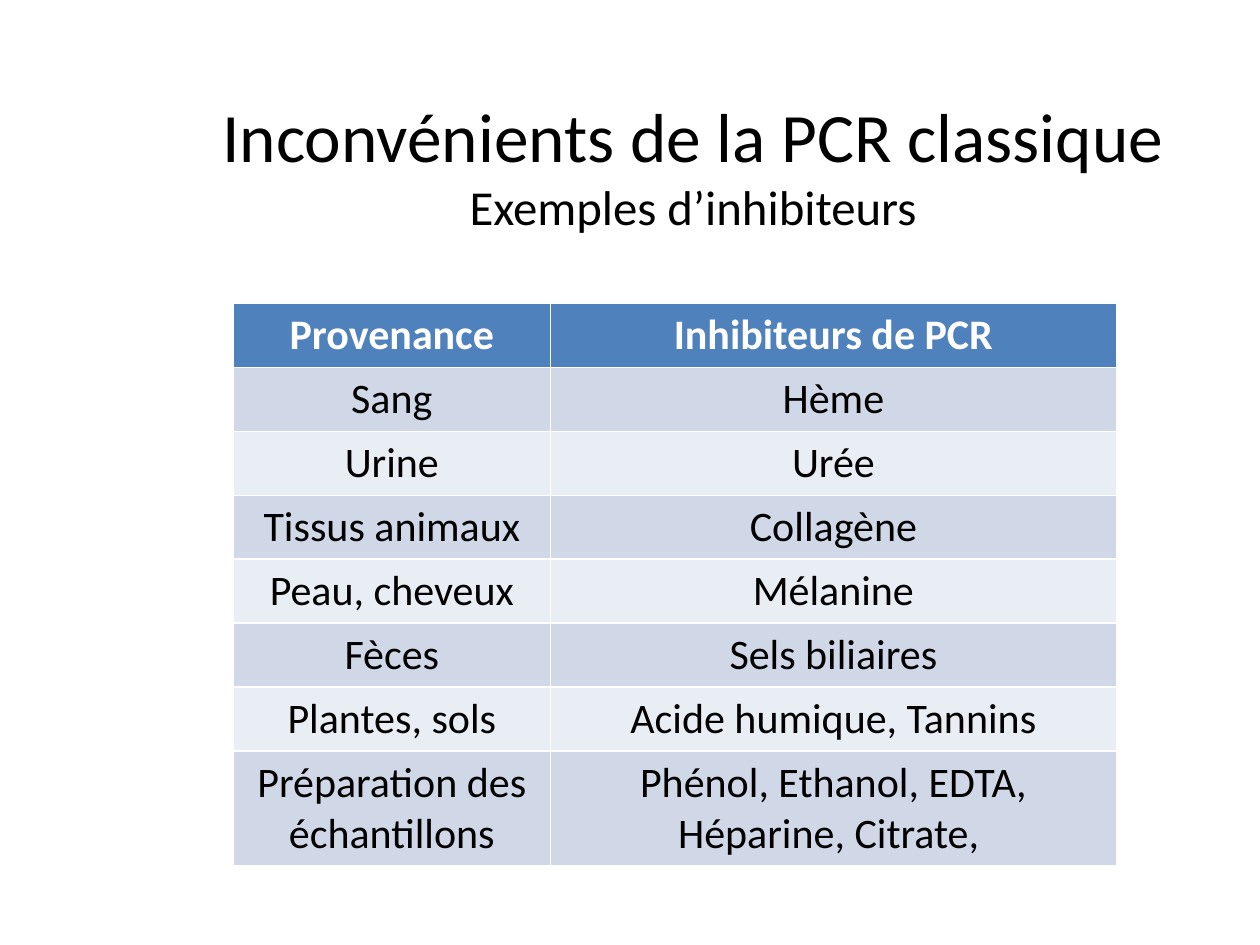
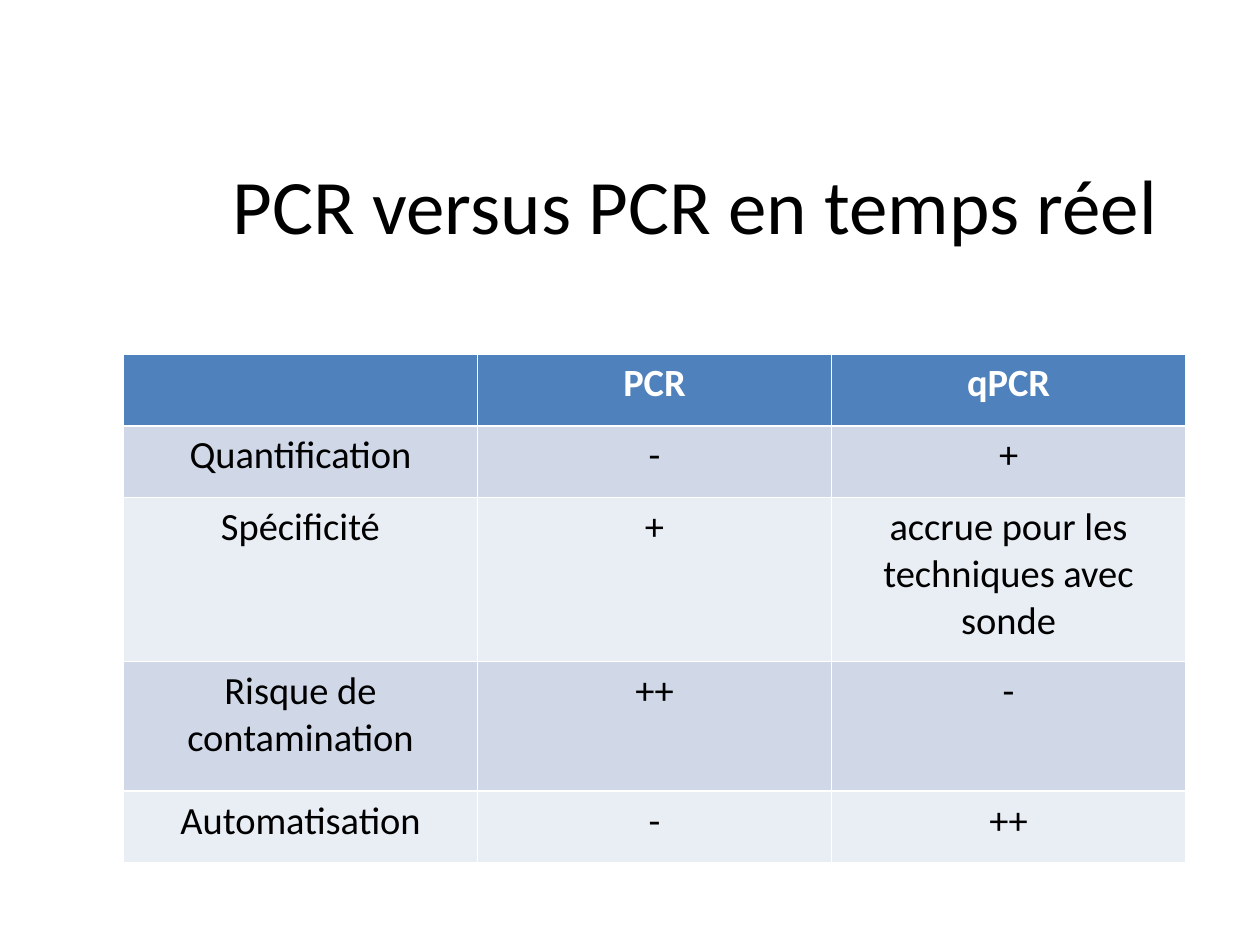
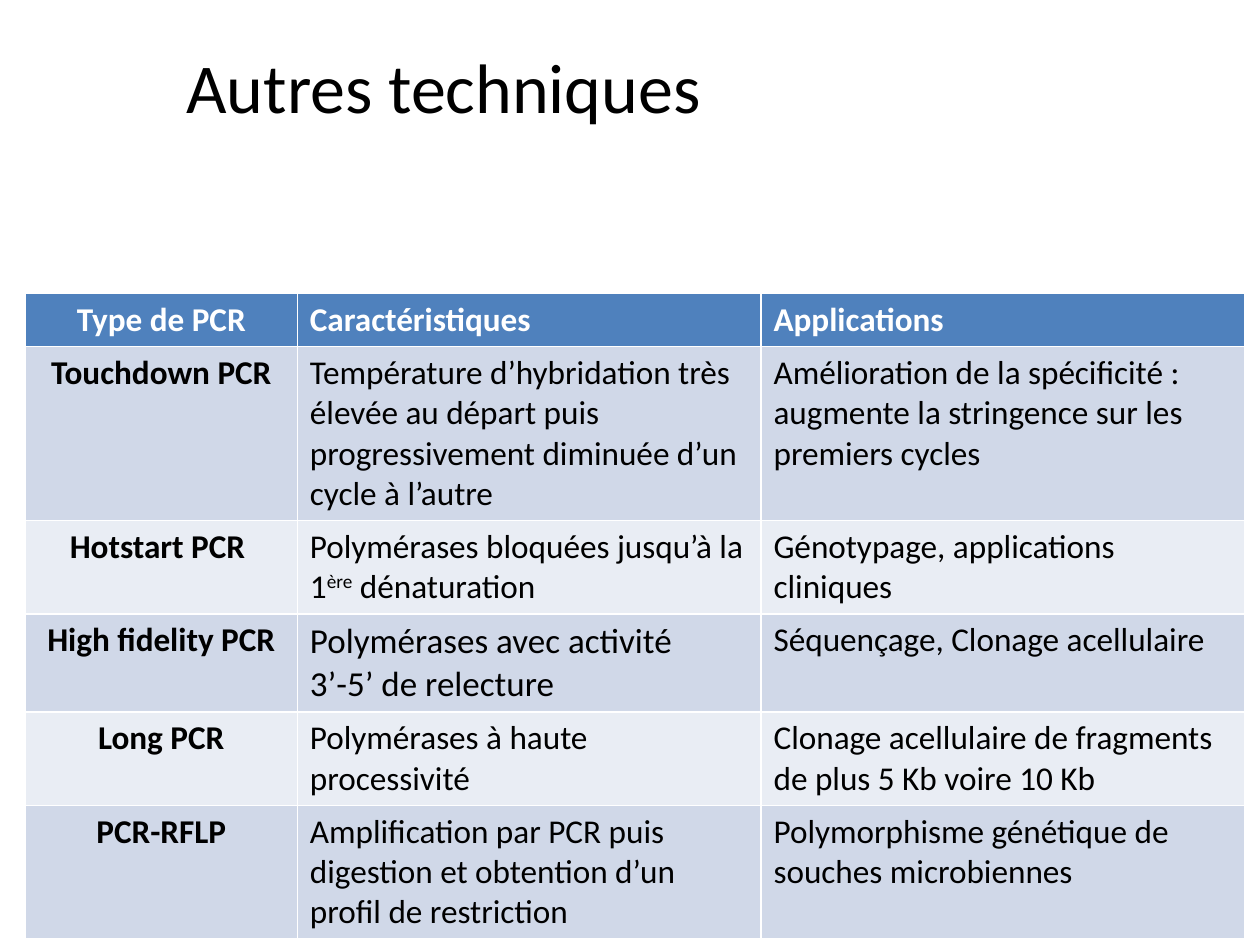
from pptx import Presentation
from pptx.dml.color import RGBColor
from pptx.enum.text import MSO_ANCHOR, MSO_AUTO_SIZE, PP_ALIGN
from pptx.util import Inches, Pt

FONT = "Calibri"
COLORS = {
    "header": "4F81BD",
    "band_dark": "D0D8E8",
    "band_light": "E9EDF4",
    "text": "000000",
    "header_text": "FFFFFF",
}

SLIDES = [
    {
        "title": [("Inconvénients de la PCR classique", 39.6),
                  ("Exemples d’inhibiteurs", 27.9)],
        "title_box": (1, 0.68, 9, 1.25),
        "title_align": PP_ALIGN.CENTER,
        "table_at": (1.85, 2.41),
        "columns": [2.52, 4.49],
        "row_heights": [0.41] * 8,
        "size": 24,
        "rows": [
            ["Provenance", "Inhibiteurs de PCR"],
            ["Sang", "Hème"],
            ["Urine", "Urée"],
            ["Tissus animaux", "Collagène"],
            ["Peau, cheveux", "Mélanine"],
            ["Fèces", "Sels biliaires"],
            ["Plantes, sols", "Acide humique, Tannins"],
            ["Préparation des échantillons",
             "Phénol, Ethanol, EDTA, Héparine, Citrate, "],
        ],
    },
    {
        "title": [("PCR versus PCR en temps réel", 44)],
        "title_box": (1.04, 0.99, 8.96, 1.25),
        "title_align": PP_ALIGN.CENTER,
        "table_at": (0.98, 2.81),
        "columns": [2.81] * 3,
        "row_heights": [0.57, 0.57, 1.3, 1.03, 0.57],
        "size": 22,
        "rows": [
            ["", "PCR", "qPCR"],
            ["Quantification", "-", "+"],
            ["Spécificité", "+", "accrue pour les techniques avec sonde"],
            ["Risque de contamination", "++", "-"],
            ["Automatisation", "-", "++"],
        ],
    },
    {
        "title": [("Autres techniques", 40)],
        "title_box": (1.38, 0.29, 8.12, 0.77),
        "title_align": PP_ALIGN.LEFT,
        "table_at": (0.2, 2.33),
        "columns": [2.16, 3.68, 3.84],
        "row_heights": [0.41, 0.7, 0.52, 0.41, 0.41, 0.41],
        "size": 19,
        "cell_sizes": {(3, 1): 20},
        "row_labels": True,
        "rows": [
            ["Type de PCR", "Caractéristiques", "Applications"],
            ["Touchdown PCR",
             "Température d’hybridation très élevée au départ puis "
             "progressivement diminuée d’un cycle à l’autre",
             "Amélioration de la spécificité : augmente la stringence "
             "sur les premiers cycles"],
            ["Hotstart PCR ",
             "Polymérases bloquées jusqu’à la 1^ère^ dénaturation",
             "Génotypage, applications cliniques"],
            ["High fidelity PCR",
             "Polymérases avec activité\n3’-5’ de relecture",
             "Séquençage, Clonage acellulaire"],
            ["Long PCR",
             "Polymérases à haute processivité",
             "Clonage acellulaire de fragments de plus 5 Kb voire 10 Kb"],
            ["PCR-RFLP",
             "Amplification par PCR puis digestion et obtention d’un "
             "profil de restriction",
             "Polymorphisme génétique de souches microbiennes"],
        ],
    },
]


def add_run(paragraph, text, size, color, bold=False):
    run = paragraph.add_run()
    run.text = text
    run.font.name = FONT
    run.font.size = Pt(size)
    run.font.bold = bold
    run.font.color.rgb = RGBColor.from_string(COLORS[color])
    return run


def fill_cell(cell, text, size, color, bold, alignment):
    """Write text; a newline starts a paragraph and ^...^ marks a superscript."""
    for index, line in enumerate(text.split("\n")):
        text_frame = cell.text_frame
        paragraph = text_frame.add_paragraph() if index else text_frame.paragraphs[0]
        paragraph.alignment = alignment
        for part_index, part in enumerate(line.split("^")):
            if part:
                run = add_run(paragraph, part, size, color, bold)
                if part_index % 2:
                    run._r.get_or_add_rPr().set("baseline", "30000")


presentation = Presentation()
presentation.slide_width = Inches(10)
presentation.slide_height = Inches(7.5)
title_only_layout = presentation.slide_layouts[5]

for content in SLIDES:
    slide = presentation.slides.add_slide(title_only_layout)

    title = slide.shapes.title
    title.left, title.top, title.width, title.height = map(Inches, content["title_box"])
    title.text_frame.auto_size = MSO_AUTO_SIZE.NONE
    title.text_frame.vertical_anchor = MSO_ANCHOR.MIDDLE
    paragraph = title.text_frame.paragraphs[0]
    paragraph.alignment = content["title_align"]
    for line_index, (text, size) in enumerate(content["title"]):
        if line_index:
            paragraph.add_line_break()
        add_run(paragraph, text, size, "text")

    rows, columns, heights = content["rows"], content["columns"], content["row_heights"]
    left, top = content["table_at"]
    table = slide.shapes.add_table(
        len(rows), len(columns), Inches(left), Inches(top),
        Inches(sum(columns)), Inches(sum(heights))).table
    for column, width in zip(table.columns, columns):
        column.width = Inches(width)
    for row, height in zip(table.rows, heights):
        row.height = Inches(height)

    has_row_labels = content.get("row_labels", False)
    cell_sizes = content.get("cell_sizes", {})
    for row_index, row_texts in enumerate(rows):
        is_header = row_index == 0
        band = "header" if is_header else "band_dark" if row_index % 2 else "band_light"
        for column_index, text in enumerate(row_texts):
            cell = table.cell(row_index, column_index)
            cell.fill.solid()
            cell.fill.fore_color.rgb = RGBColor.from_string(COLORS[band])
            is_label = has_row_labels and column_index == 0
            centered = is_label or not has_row_labels
            fill_cell(
                cell, text,
                cell_sizes.get((row_index, column_index), content["size"]),
                "header_text" if is_header else "text",
                is_header or is_label,
                PP_ALIGN.CENTER if centered else PP_ALIGN.LEFT)

presentation.save("out.pptx")
